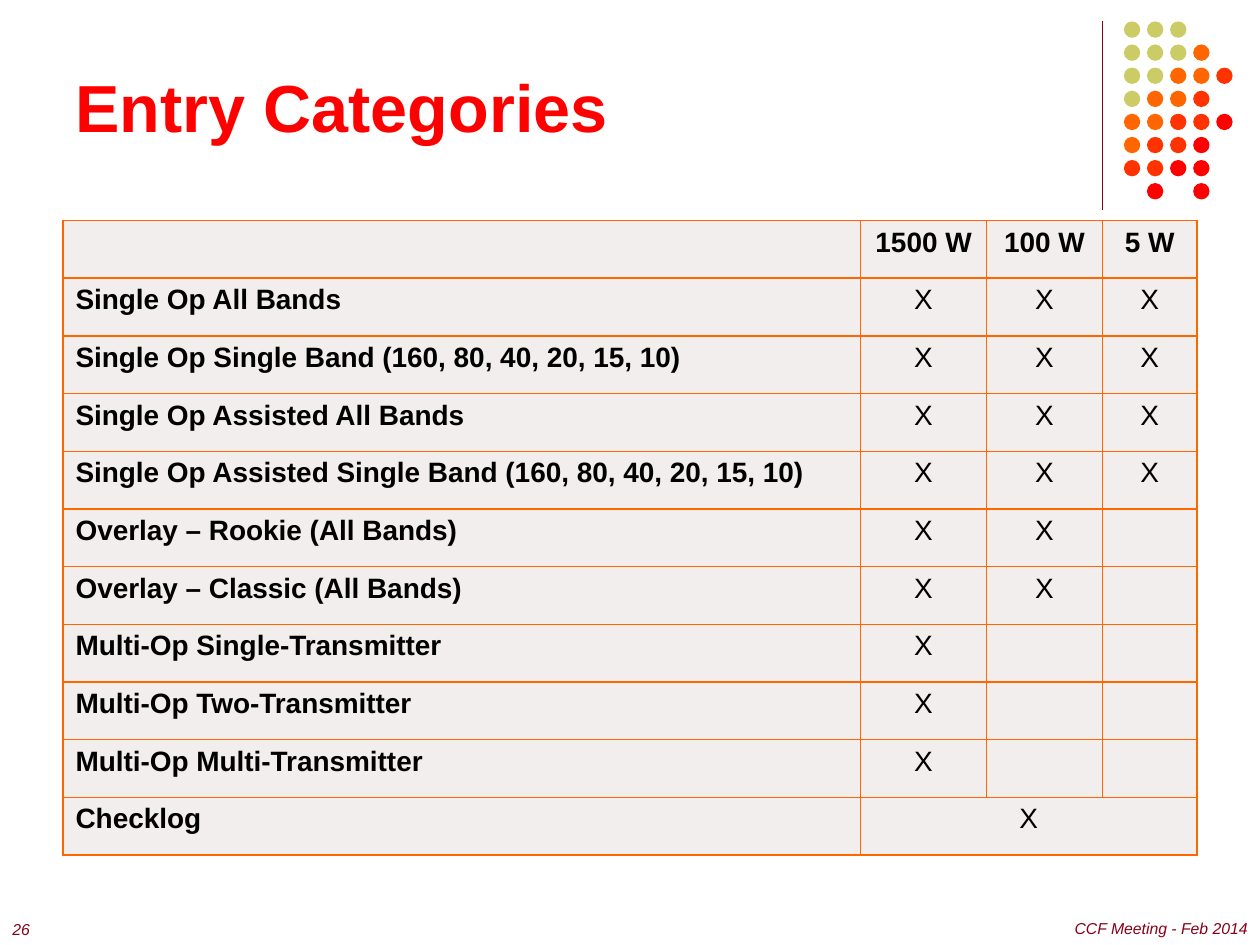
from lxml import etree
from pptx import Presentation
from pptx.dml.color import RGBColor
from pptx.enum.shapes import MSO_CONNECTOR, MSO_SHAPE
from pptx.enum.text import MSO_ANCHOR, PP_ALIGN
from pptx.oxml import parse_xml
from pptx.oxml.ns import nsdecls, qn
from pptx.util import Inches, Pt

LEFT, CENTER, RIGHT = PP_ALIGN.LEFT, PP_ALIGN.CENTER, PP_ALIGN.RIGHT
MIDDLE = MSO_ANCHOR.MIDDLE
STRAIGHT, OVAL = MSO_CONNECTOR.STRAIGHT, MSO_SHAPE.OVAL
MAROON, RED, ORANGE, BLACK, CELL_GREY = "86001A", "FF0000", "FF6600", "000000", "F3EEEE"


def color(value):
    return RGBColor.from_string(value)


def write(frame, text, size, ink, align=LEFT, bold=False, italic=False):
    para = frame.paragraphs[0]
    para.text = text
    para.alignment = align
    para.font.name = "Arial"
    para.font.size = Pt(size)
    para.font.bold = bold
    para.font.italic = italic
    para.font.color.rgb = color(ink)


deck = Presentation()
deck.slide_width, deck.slide_height = Inches(10), Inches(7.5)
page = deck.slides.add_slide(deck.slide_layouts[6])

# Vertical rule beside the dot pattern
rule = page.shapes.add_connector(STRAIGHT, Inches(8.75), Inches(0.17), Inches(8.75), Inches(1.67))
rule.line.color.rgb = color(MAROON)
rule.line.width = Pt(0.75)
etree.SubElement(rule._element.spPr, qn("a:effectLst"))

# Dot pattern: one letter per dot, a space leaves a gap
DOT_COLORS = {"g": "CCCC66", "o": ORANGE, "v": "FF3300", "r": RED}
DOT_ROWS = ["ggg", "gggo", "ggoov", "goov", "oovvr", "ovvr", "vvrr", " r r"]
DOT_SIZE, DOT_PITCH = 0.13, 0.55 / 3
dots = page.shapes.add_group_shape()
for row, letters in enumerate(DOT_ROWS):
    for column, letter in enumerate(letters):
        if letter == " ":
            continue
        dot = dots.shapes.add_shape(
            OVAL, Inches(8.92 + column * DOT_PITCH), Inches(0.17 + row * DOT_PITCH),
            Inches(DOT_SIZE), Inches(DOT_SIZE))
        dot.shadow.inherit = False
        dot.fill.solid()
        dot.fill.fore_color.rgb = color(DOT_COLORS[letter])
        dot.line.fill.background()

# Title, page number and footer
TEXTS = [
    ("Entry Categories", (0.5, 0.13, 8.17, 1.42), 38, RED, LEFT, True, False),
    ("26", (0, 7.24, 0.42, 0.27), 9, MAROON, LEFT, False, True),
    ("CCF Meeting - Feb 2014", (8.06, 7.23, 1.94, 0.27), 9, MAROON, RIGHT, False, True),
]
for text, place, *style in TEXTS:
    box = page.shapes.add_textbox(*map(Inches, place))
    box.text_frame.word_wrap = True
    box.text_frame.vertical_anchor = MIDDLE
    write(box.text_frame, text, *style)

# Category table: entry name and number of power levels allowed
POWERS = ["1500 W", "100 W", "5 W"]
CATEGORIES = [
    ("Single Op All Bands", 3),
    ("Single Op Single Band (160, 80, 40, 20, 15, 10)", 3),
    ("Single Op Assisted All Bands", 3),
    ("Single Op Assisted Single Band (160, 80, 40, 20, 15, 10)", 3),
    ("Overlay – Rookie (All Bands)", 2),
    ("Overlay – Classic (All Bands)", 2),
    ("Multi-Op Single-Transmitter", 1),
    ("Multi-Op Two-Transmitter", 1),
    ("Multi-Op Multi-Transmitter", 1),
    ("Checklog", 1),
]
rows = [["", *POWERS]]
rows += [[name] + ["X"] * count + [""] * (3 - count) for name, count in CATEGORIES]

table = page.shapes.add_table(
    len(rows), 4, Inches(0.5), Inches(1.75), Inches(9), Inches(5.04)).table
for column, width in zip(table.columns, (6.33, 1, 0.92, 0.75)):
    column.width = Inches(width)

for row, texts in enumerate(rows):
    for column, text in enumerate(texts):
        cell = table.cell(row, column)
        for side in ("lnL", "lnR", "lnT", "lnB"):
            cell._tc.get_or_add_tcPr().append(parse_xml(
                f'<a:{side} {nsdecls("a")} w="{Pt(1)}"><a:solidFill>'
                f'<a:srgbClr val="{ORANGE}"/></a:solidFill></a:{side}>'))
        cell.fill.solid()
        cell.fill.fore_color.rgb = color(CELL_GREY)
        if text:
            write(cell.text_frame, text, 16, BLACK,
                  align=CENTER if column else LEFT, bold=row == 0 or column == 0)

# Checklog covers every power level
last = len(rows) - 1
table.cell(last, 1).merge(table.cell(last, 3))

deck.save("out.pptx")
